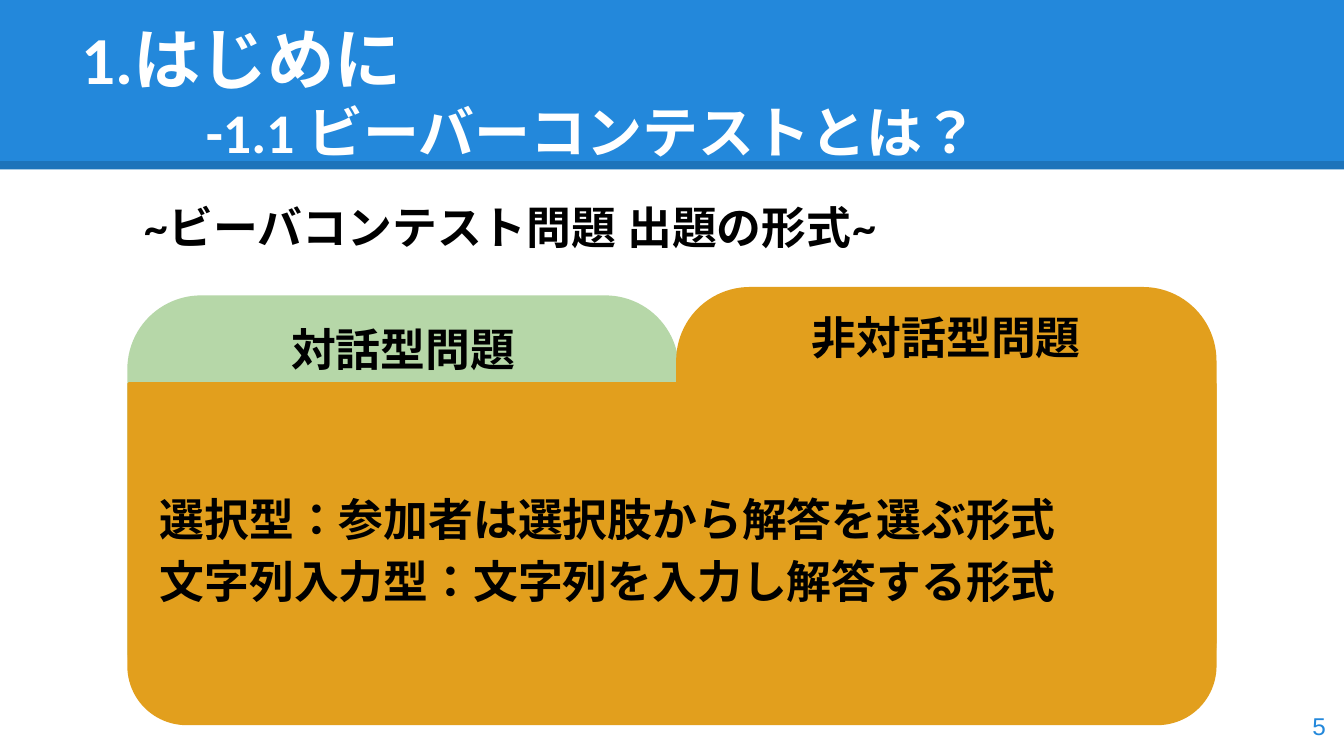
import lxml.etree
import pptx
import pptx.dml.color
import pptx.enum.lang
import pptx.enum.shapes
import pptx.enum.text
import pptx.oxml
import pptx.oxml.ns
import pptx.util

PX = 9525
INK = {"blue": "2388DB", "green": "B6D7A8", "gold": "E29F1D", "white": "FFFFFF", "black": "000000"}
KIND = pptx.enum.shapes.MSO_SHAPE
SIDE = pptx.enum.text.PP_ALIGN
HOLD = pptx.enum.text.MSO_ANCHOR


def paint(fill, ink):
    """Give a fill one solid colour."""
    fill.solid()
    fill.fore_color.rgb = pptx.dml.color.RGBColor.from_string(INK[ink])


def scale(box):
    """Turn a box in px into EMU."""
    return [n * PX for n in box]


def write(shape, lines, ink, size, face, bold=True, frame=None, para=None):
    """Fill a shape with styled lines of text."""
    text = shape.text_frame
    look = {"word_wrap": True, "vertical_anchor": HOLD.MIDDLE}
    for side in ("left", "right", "top", "bottom"):
        look["margin_" + side] = 10 * PX
    for name, value in (look | (frame or {})).items():
        setattr(text, name, value)
    text.text = "\n".join(lines)
    font = {"name": face, "size": pptx.util.Pt(size), "bold": bold,
            "language_id": pptx.enum.lang.MSO_LANGUAGE_ID.JAPANESE}
    for part in text.paragraphs:
        for name, value in ({"alignment": SIDE.LEFT} | (para or {})).items():
            setattr(part, name, value)
        for run in part.runs:
            for name, value in font.items():
                setattr(run.font, name, value)
            paint(run.font.fill, ink)
            east = lxml.etree.SubElement(run.font._element, pptx.oxml.ns.qn("a:ea"))
            east.set("typeface", face)


def block(slide, kind, box, ink, bends=()):
    """Draw a plain shape in one colour."""
    shape = slide.shapes.add_shape(kind, *scale(box))
    shape.shadow.inherit = False
    paint(shape.fill, ink)
    paint(shape.line.fill, ink)
    shape.line.width = pptx.util.Pt(1.5)
    for i, bend in enumerate(bends):
        shape.adjustments[i] = bend
    return shape


def label(slide, box, words, *font, **more):
    """Place a box of text."""
    write(slide.shapes.add_textbox(*scale(box)), [words], *font, **more)


def header(slide, x, y, w, h):
    """Draw the title band with its shaded edge."""
    band = block(slide, KIND.RECTANGLE, (x, y, w, h), "blue")
    band.line.fill.background()
    edge = y + h - 3
    rule = slide.shapes.add_connector(
        pptx.enum.shapes.MSO_CONNECTOR.STRAIGHT, *scale((x, edge, x + w, edge)))
    rule.line.width = pptx.util.Pt(4.5)
    paint(rule.line.fill, "black")
    tint = next(rule._element.iter(pptx.oxml.ns.qn("a:srgbClr")))
    lxml.etree.SubElement(tint, pptx.oxml.ns.qn("a:alpha")).set("val", "15000")
    lxml.etree.SubElement(rule._element.spPr, pptx.oxml.ns.qn("a:effectLst"))
    label(slide, (x + 48, y + 8, w - 96, 72), "1.はじめに", "white", 36, "Calibri",
          frame={"vertical_anchor": HOLD.BOTTOM})
    label(slide, (x + 137, y + 60, 813, 52), "-1.1 ビーバーコンテストとは？", "white", 30, "Calibri",
          frame={"vertical_anchor": HOLD.TOP})


def folder(slide, x, y, w, h):
    """Draw two tabs above a panel with its answer types."""
    tabs = [("対話型問題", "green", 0, 6, 392, 3), ("非対話型問題", "gold", 392, 0, w - 392, 0)]
    for words, ink, left, top, wide, gap in tabs:
        tab = block(slide, KIND.ROUNDED_RECTANGLE, (x + left, y + top, wide, 304), ink, [0.17])
        write(tab, [words], "black", 24, "Lato", para={"alignment": SIDE.CENTER},
              frame={"vertical_anchor": HOLD.TOP, "margin_top": gap * PX})
    panel = block(slide, KIND.ROUND_2_SAME_RECTANGLE, (x, y + 68, w, h - 68), "gold", [0, 0.17])
    lines = ["選択型：参加者は選択肢から解答を選ぶ形式", "文字列入力型：文字列を入力し解答する形式"]
    write(panel, lines, "black", 24, "Calibri", para={"line_spacing": 1.15})


def main():
    """Build and save the slide."""
    deck = pptx.Presentation()
    deck.slide_width, deck.slide_height = scale((960, 540))
    slide = deck.slides.add_slide(deck.slide_layouts[6])
    header(slide, 0, 0, 960, 121)
    label(slide, (92, 133, 557, 58), "~ビーバコンテスト問題 出題の形式~", "black", 24, "Lato")
    folder(slide, 92, 206, 776, 311)
    label(slide, (899, 498, 58, 41), "5", "blue", 13, "Arial", bold=False,
          para={"alignment": SIDE.RIGHT})
    deck.save("out.pptx")


if __name__ == "__main__":
    main()
